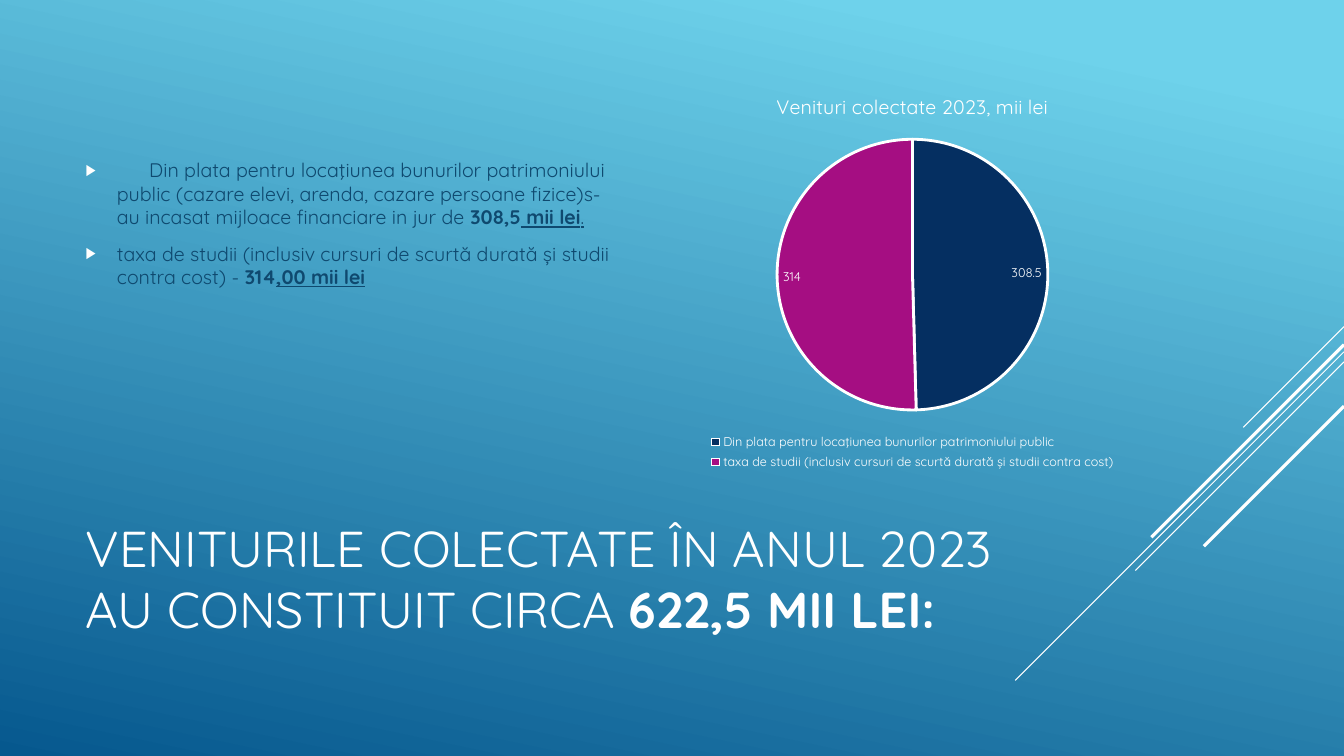
from lxml.etree import SubElement
from pptx import Presentation
from pptx.chart.data import CategoryChartData
from pptx.dml.color import RGBColor
from pptx.enum.chart import XL_CHART_TYPE as ChartType, XL_LABEL_POSITION as LabelPos, XL_LEGEND_POSITION as LegendPos
from pptx.enum.shapes import MSO_CONNECTOR as Connector
from pptx.enum.text import MSO_ANCHOR as Anchor, MSO_AUTO_SIZE as AutoSize, PP_ALIGN as Align
from pptx.oxml.ns import qn
from pptx.util import Inches, Pt

FONT = "Quicksand"
WHITE = RGBColor(0xFF, 0xFF, 0xFF)
INK = RGBColor(0x0F, 0x49, 0x6F)
SKY = RGBColor(0x6E, 0xD2, 0xEB)
DEEP = RGBColor(0x06, 0x58, 0x8E)
NAVY = RGBColor(0x05, 0x2F, 0x61)
MAGENTA = RGBColor(0xA5, 0x0E, 0x82)

TITLE = [("VENITURILE COLECTATE ÎN ANUL 2023 AU CONSTITUIT CIRCA ", ""), ("622,5 MII LEI:", "b")]
BULLETS = [
    [("\tDin plata pentru locaţiunea bunurilor patrimoniului public (cazare elevi, arenda, "
      "cazare persoane fizice)s-au incasat mijloace financiare in jur de ", ""),
     ("308,5", "b"), (" mii lei", "bu"), (".", "u")],
    [("taxa de studii (inclusiv cursuri de scurtă durată și studii contra cost) - ", ""),
     ("314", "b"), (",00 mii lei", "bu")],
]
CHART_TITLE = "Venituri colectate 2023, mii lei"
INCOME = [
    ("Din plata pentru locaţiunea bunurilor patrimoniului public", 308.5, NAVY),
    ("taxa de studii (inclusiv cursuri de scurtă durată și studii contra cost)", 314, MAGENTA),
]
PLOT_SHARES = {"x": 0.25, "y": 0.16, "w": 0.5, "h": 0.68}
DIAGONALS = [(3.24, 1, 0.75), (3.49, 3.26, 0.75), (3.59, 2.07, 0.75), (3.42, 1.91, 2.25), (4.03, 1.39, 2.25)]

WIDTH, HEIGHT = 13.33, 7.5
MARGIN, COLUMN, GUTTER, ROW = 0.75, 5.4, 0.2, 3.95
INDENT, FIRST_TAB = 0.31, 0.63


def set_font(font, size, color):
    font.name, font.size = FONT, Pt(size)
    font.color.rgb = color


def add_spans(para, spans, size, color):
    set_font(para.font, size, color)
    para.alignment = Align.LEFT
    for text, style in spans:
        span = para.add_run()
        span.text = text
        if "b" in style:
            span.font.bold = True
        if "u" in style:
            span.font.underline = True


def place(box, left, top, width, height):
    box.left, box.top, box.width, box.height = map(Inches, (left, top, width, height))
    box.text_frame.word_wrap = True
    box.text_frame.auto_size = AutoSize.NONE
    return box.text_frame


def add_bullet(para):
    props = para._p.get_or_add_pPr()
    props.set("marL", str(Inches(INDENT)))
    props.set("indent", str(-Inches(INDENT)))
    bullet_color = SubElement(props, qn("a:buClr"))
    SubElement(bullet_color, qn("a:srgbClr"), val=str(WHITE))
    SubElement(props, qn("a:buSzPct"), val="80000")
    SubElement(props, qn("a:buChar"), char="▶")
    tabs = SubElement(props, qn("a:tabLst"))
    SubElement(tabs, qn("a:tab"), pos=str(Inches(FIRST_TAB)), algn="l")


def add_background(page):
    fill = page.background.fill
    fill.gradient()
    fill.gradient_angle = 360 - 102
    for stop, position, color in zip(fill.gradient_stops, (0.1, 1), (SKY, DEEP)):
        stop.position = position
        stop.color.rgb = color


def add_diagonals(page):
    for top, run, weight in DIAGONALS:
        line = page.shapes.add_connector(
            Connector.STRAIGHT, *map(Inches, (WIDTH, top, WIDTH - run, top + run)))
        line.line.color.rgb = WHITE
        line.line.width = Pt(weight)
        SubElement(line._element.spPr, qn("a:effectLst"))


def add_text(page):
    frame = place(page.shapes.title, MARGIN, 4.91, 9.33, 1.65)
    frame.vertical_anchor = Anchor.MIDDLE
    add_spans(frame.paragraphs[0], TITLE, 36, WHITE)

    frame = place(page.placeholders[1], MARGIN, MARGIN, COLUMN, ROW)
    frame.vertical_anchor = Anchor.TOP
    frame.margin_top = Inches(0.82)
    for index, spans in enumerate(BULLETS):
        para = frame.add_paragraph() if index else frame.paragraphs[0]
        para.space_before, para.space_after = Pt(3 if index else 0), Pt(6)
        add_bullet(para)
        add_spans(para, spans, 14, INK)


def add_income_chart(page):
    data = CategoryChartData()
    data.categories = [name for name, value, color in INCOME]
    data.add_series("Series 1", [value for name, value, color in INCOME])
    area = map(Inches, (MARGIN + COLUMN + GUTTER, MARGIN, COLUMN, ROW))
    chart = page.shapes.add_chart(ChartType.PIE, *area, data).chart
    set_font(chart.font, 10, WHITE)

    chart.has_title = True
    heading = chart.chart_title.text_frame.paragraphs[0]
    heading.text = CHART_TITLE
    set_font(heading.font, 14, WHITE)
    heading.font.bold = False

    chart.has_legend = True
    chart.legend.position = LegendPos.BOTTOM
    chart.legend.include_in_layout = False
    set_font(chart.legend.font, 9, WHITE)

    pie = chart.plots[0]
    pie.vary_by_categories = True
    pie.has_data_labels = True
    pie.data_labels.show_value = True
    pie.data_labels.show_percentage = False
    pie.data_labels.position = LabelPos.INSIDE_END
    set_font(pie.data_labels.font, 9, WHITE)
    for index, (name, value, color) in enumerate(INCOME):
        look = pie.series[0].points[index].format
        look.fill.solid()
        look.fill.fore_color.rgb = color
        look.line.color.rgb = WHITE
        look.line.width = Pt(2)

    plot_area = chart._chartSpace.chart.plotArea
    layout = plot_area.find(qn("c:layout"))
    if layout is None:
        layout = SubElement(plot_area, qn("c:layout"))
        plot_area.insert(0, layout)
    manual = SubElement(layout, qn("c:manualLayout"))
    SubElement(manual, qn("c:layoutTarget"), val="inner")
    for axis in "xy":
        SubElement(manual, qn(f"c:{axis}Mode"), val="edge")
    for side, share in PLOT_SHARES.items():
        SubElement(manual, qn(f"c:{side}"), val=str(share))


def main():
    deck = Presentation()
    deck.slide_width, deck.slide_height = Inches(WIDTH), Inches(HEIGHT)
    page = deck.slides.add_slide(deck.slide_layouts[1])
    add_background(page)
    add_diagonals(page)
    add_text(page)
    add_income_chart(page)
    deck.save("out.pptx")


if __name__ == "__main__":
    main()
